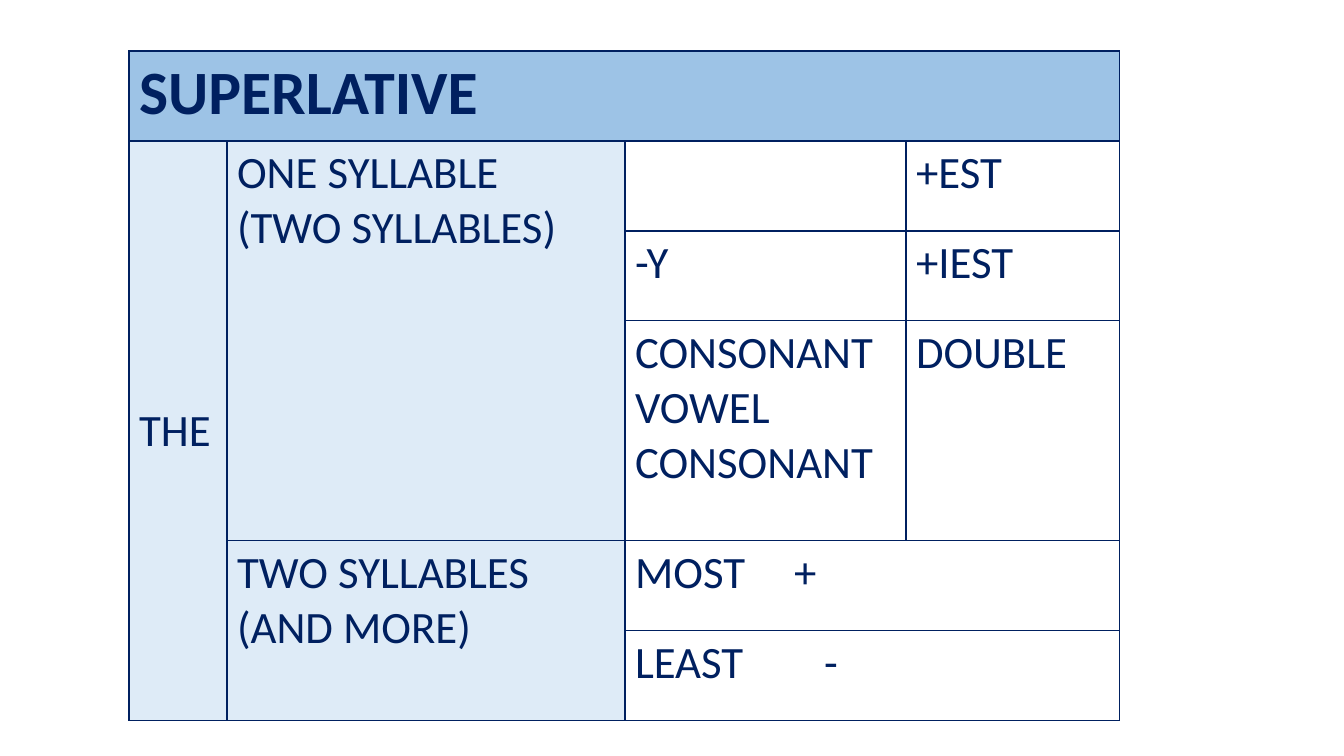
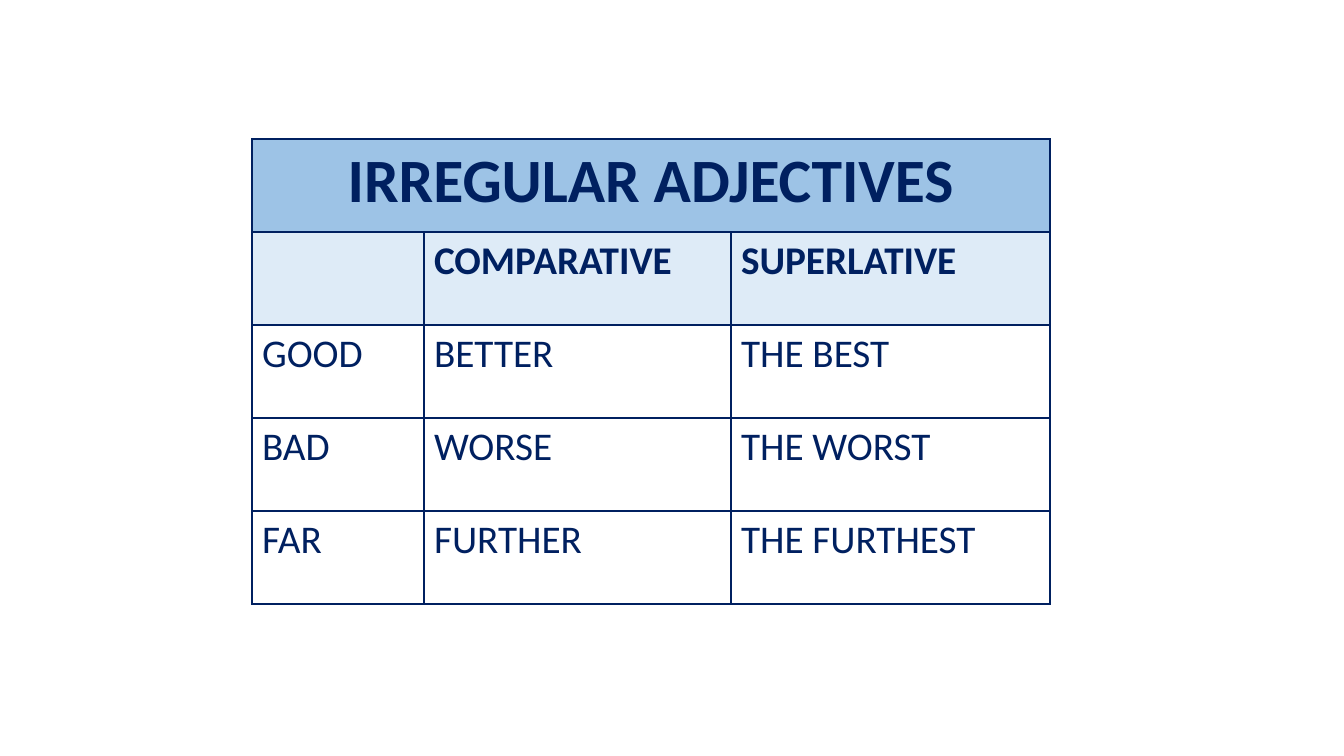
from lxml import etree
from pptx import Presentation, util as u
from pptx.dml import color
from pptx.enum import text
from pptx.oxml import ns

PX = 914400 / 100.8
NAVY, BLUE, PALE, WHITE = "002060", "9DC3E6", "DEEBF7", "FFFFFF"


def px(length):
    return u.Emu(round(length * PX))


def rgb(code):
    return color.RGBColor.from_string(code)


class Deck:
    """Shared style of the grammar tables and the current slide."""
    font = "Calibri"
    title_size = 44

    def __init__(self, width, height):
        self.prs = Presentation()
        self.prs.slide_width, self.prs.slide_height = px(width), px(height)

    def add_slide(self):
        self.slide = self.prs.slides.add_slide(self.prs.slide_layouts[6])

    def grid(self, left, top, columns, rows, merges=()):
        frame = self.slide.shapes.add_table(
            len(rows), len(columns), px(left), px(top), px(sum(columns)), px(sum(rows)))
        table = frame.table
        table.first_row = table.horz_banding = False
        for column, width in zip(table.columns, columns):
            column.width = px(width)
        for row, height in zip(table.rows, rows):
            row.height = px(height)
        for cell in table.iter_cells():
            self.fill(cell, WHITE)
            self.border(cell)
        for first, last in merges:
            table.cell(*first).merge(table.cell(*last))
        return table

    def fill(self, cell, code):
        cell.fill.solid()
        cell.fill.fore_color.rgb = rgb(code)

    def border(self, cell):
        properties = cell._tc.get_or_add_tcPr()
        for position, side in enumerate(("lnL", "lnR", "lnT", "lnB")):
            line = etree.Element(ns.qn(f"a:{side}"), w=str(u.Pt(1)))
            solid = etree.SubElement(line, ns.qn("a:solidFill"))
            etree.SubElement(solid, ns.qn("a:srgbClr"), val=NAVY)
            properties.insert(position, line)

    def label(self, cell, words, size, bold=False, align=text.PP_ALIGN.LEFT):
        cell.text_frame.text = words
        for paragraph in cell.text_frame.paragraphs:
            paragraph.alignment = align
            font = paragraph.font
            font.name, font.size, font.bold = self.font, u.Pt(size), bold
            font.color.rgb = rgb(NAVY)

    def title(self, table, words, align=text.PP_ALIGN.LEFT):
        heading = table.cell(0, 0)
        self.fill(heading, BLUE)
        self.label(heading, words, self.title_size, True, align)

    def tab_stop(self, cell, position):
        properties = cell.text_frame.paragraphs[0]._p.get_or_add_pPr()
        stops = etree.Element(ns.qn("a:tabLst"))
        etree.SubElement(stops, ns.qn("a:tab"), pos=str(px(position)), algn="l")
        properties.insert(0, stops)


def superlative(deck):
    deck.add_slide()
    rules = deck.grid(
        129, 51, (98, 398, 281, 214), (90, 90, 90, 220, 90, 90),
        merges=(((0, 0), (0, 3)), ((1, 0), (5, 0)), ((1, 1), (3, 1)),
                ((4, 1), (5, 1)), ((4, 2), (4, 3)), ((5, 2), (5, 3))))
    deck.title(rules, "SUPERLATIVE")

    # Row and column of each rule, with its text
    wording = {
        (1, 0): "THE",
        (1, 1): "ONE SYLLABLE\n(TWO SYLLABLES)",
        (1, 3): "+EST",
        (2, 2): "-Y",
        (2, 3): "+IEST",
        (3, 2): "CONSONANT\nVOWEL\nCONSONANT",
        (3, 3): "DOUBLE",
        (4, 1): "TWO SYLLABLES\n(AND MORE)",
        (4, 2): "MOST\t+",
        (5, 2): "LEAST\t-",
    }
    for (row, column), words in wording.items():
        cell = rules.cell(row, column)
        deck.label(cell, words, 32)
        if column < 2:
            deck.fill(cell, PALE)
    rules.cell(1, 0).vertical_anchor = text.MSO_ANCHOR.MIDDLE

    # Signs after MOST and LEAST
    for row, position in ((4, 159), (5, 189)):
        deck.tab_stop(rules.cell(row, 2), position)


def irregular(deck):
    deck.add_slide()
    forms = deck.grid(252, 139, (172, 307, 319), (93,) * 5,
                      merges=(((0, 0), (0, 2)),))
    deck.title(forms, "IRREGULAR ADJECTIVES", text.PP_ALIGN.CENTER)

    # Column heads, then one adjective a row
    adjectives = (
        ("", "COMPARATIVE", "SUPERLATIVE"),
        ("GOOD", "BETTER", "THE BEST"),
        ("BAD", "WORSE", "THE WORST"),
        ("FAR", "FURTHER", "THE FURTHEST"),
    )
    for row, entries in enumerate(adjectives, 1):
        for column, words in enumerate(entries):
            cell = forms.cell(row, column)
            deck.label(cell, words, 28, bold=row == 1)
            if row == 1:
                deck.fill(cell, PALE)


def main():
    deck = Deck(1344, 756)
    superlative(deck)
    irregular(deck)
    deck.prs.save("out.pptx")


if __name__ == "__main__":
    main()
